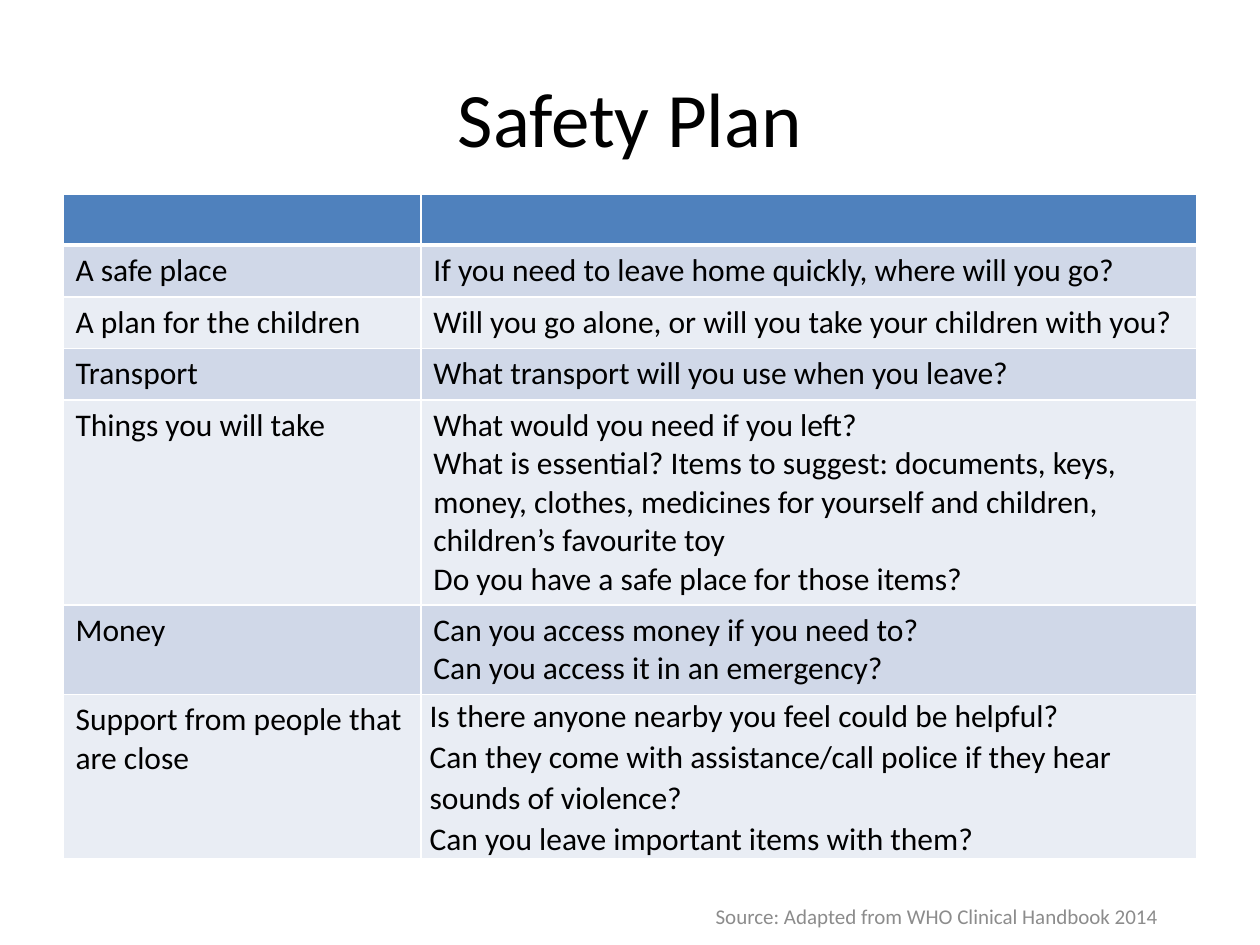
from lxml import etree
from pptx import Presentation
from pptx.dml.color import RGBColor
from pptx.enum.text import MSO_ANCHOR, PP_ALIGN
from pptx.oxml.ns import qn
from pptx.util import Inches, Pt

MIDDLE = MSO_ANCHOR.MIDDLE
CENTER, RIGHT = PP_ALIGN.CENTER, PP_ALIGN.RIGHT
TITLE_ONLY = 5

FONT = "Calibri"
BLACK, WHITE, GREY = "000000", "FFFFFF", "8C8C8C"
HEADER_FILL = "4F81BD"
BAND_FILLS = ["D0D8E8", "E9EDF4"]

COLUMN_WIDTHS = [2.84, 6.16]
ROW_HEIGHTS = [0.4, 0.41, 0.41, 0.41, 1.62, 0.71, 1.3]
PLAN = [
    ("A safe place", ["If you need to leave home quickly, where will you go?"]),
    ("A plan for the children",
     ["Will you go alone, or will you take your children with you?"]),
    ("Transport", ["What transport will you use when you leave?"]),
    ("Things you will take",
     ["What would you need if you left?",
      "What is essential? Items to suggest: documents, keys, money, clothes, "
      "medicines for yourself and children, children’s favourite toy",
      "Do you have a safe place for those items?"]),
    ("Money",
     ["Can you access money if you need to?",
      "Can you access it in an emergency?"]),
    ("Support from people that are close",
     ["Is there anyone nearby you feel could be helpful?",
      "Can they come with assistance/call police if they hear sounds of violence?",
      "Can you leave important items with them?"]),
]


def color(hex_value):
    return RGBColor.from_string(hex_value)


def write_paragraphs(text_frame, lines, size, text_color=BLACK, align=None,
                     line_spacing=None):
    for index, line in enumerate(lines):
        paragraph = text_frame.paragraphs[0] if index == 0 else text_frame.add_paragraph()
        paragraph.alignment = align
        paragraph.line_spacing = line_spacing
        run = paragraph.add_run()
        run.text = line
        run.font.name = FONT
        run.font.size = Pt(size)
        run.font.color.rgb = color(text_color)


def set_borders(cell, top=1, bottom=1):
    """Draw white cell borders; must run before the cell's fill is set."""
    properties = cell._tc.get_or_add_tcPr()
    for tag, width in (("a:lnL", 1), ("a:lnR", 1), ("a:lnT", top), ("a:lnB", bottom)):
        line = etree.SubElement(properties, qn(tag), w=str(Pt(width)))
        fill = etree.SubElement(line, qn("a:solidFill"))
        etree.SubElement(fill, qn("a:srgbClr"), val=WHITE)


def fill_cell(cell, fill_color):
    cell.fill.solid()
    cell.fill.fore_color.rgb = color(fill_color)


def add_title(slide, text):
    title = slide.shapes.title
    title.left, title.top = Inches(0.5), Inches(0.3)
    title.width, title.height = Inches(9), Inches(1.25)
    title.text_frame.vertical_anchor = MIDDLE
    write_paragraphs(title.text_frame, [text], 44, align=CENTER)


def add_plan_table(slide):
    table = slide.shapes.add_table(
        len(ROW_HEIGHTS), len(COLUMN_WIDTHS), Inches(0.5), Inches(1.54),
        Inches(sum(COLUMN_WIDTHS)), Inches(sum(ROW_HEIGHTS))).table
    for column, width in zip(table.columns, COLUMN_WIDTHS):
        column.width = Inches(width)
    for row, height in zip(table.rows, ROW_HEIGHTS):
        row.height = Inches(height)

    for cell in table.rows[0].cells:
        set_borders(cell, bottom=3)
        fill_cell(cell, HEADER_FILL)

    for number, (topic, questions) in enumerate(PLAN, start=1):
        is_last = number == len(PLAN)
        topic_cell, question_cell = table.rows[number].cells
        for cell in (topic_cell, question_cell):
            set_borders(cell, top=3 if number == 1 else 1)
            fill_cell(cell, BAND_FILLS[(number - 1) % 2])
        if is_last:
            question_cell.margin_left = question_cell.margin_right = Inches(0.07)
            question_cell.margin_top = question_cell.margin_bottom = Inches(0)
        write_paragraphs(topic_cell.text_frame, [topic], 18)
        write_paragraphs(question_cell.text_frame, questions, 18,
                         line_spacing=1.07 if is_last else None)


def add_source(slide, text):
    box = slide.shapes.add_textbox(Inches(3.42), Inches(7.07), Inches(5.95), Inches(0.4))
    text_frame = box.text_frame
    text_frame.word_wrap = True
    text_frame.vertical_anchor = MIDDLE
    text_frame.margin_right = Inches(0.18)
    write_paragraphs(text_frame, [text], 12, GREY, RIGHT)


def main():
    presentation = Presentation()
    presentation.slide_width, presentation.slide_height = Inches(10), Inches(7.5)
    slide = presentation.slides.add_slide(presentation.slide_layouts[TITLE_ONLY])
    add_title(slide, "Safety Plan")
    add_plan_table(slide)
    add_source(slide, "Source: Adapted from WHO Clinical Handbook 2014")
    presentation.save("out.pptx")


if __name__ == "__main__":
    main()
